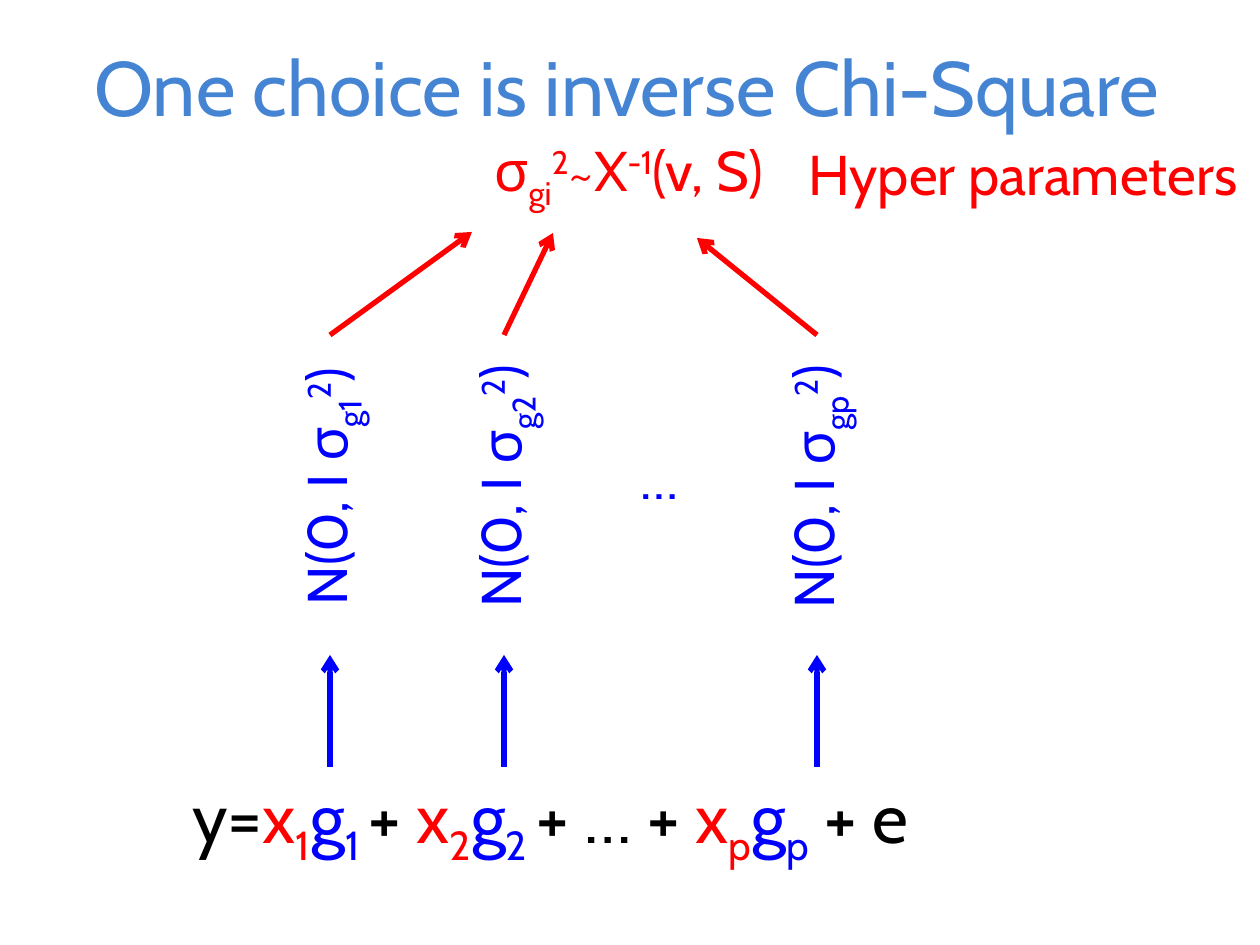
from dataclasses import dataclass
from lxml.etree import SubElement as Sub
from pptx import Presentation
from pptx.dml.color import RGBColor as Rgb
from pptx.enum.shapes import MSO_CONNECTOR as Link
from pptx.enum.text import MSO_ANCHOR as Anchor, MSO_AUTO_SIZE as Fit, PP_ALIGN as Align
from pptx.oxml.ns import qn
from pptx.util import Pt

SCALE = 914400 / 126
SUB, SUP = -25000, 30000


@dataclass(frozen=True)
class Theme:
    font: str = "Cabin"
    title: Rgb = Rgb(0x45, 0x84, 0xD3)
    ink: Rgb = Rgb(0, 0, 0)
    data: Rgb = Rgb(255, 0, 0)
    gene: Rgb = Rgb(0, 0, 255)
    head: int = 44
    model: int = 40
    label: int = 32
    line: int = 3


LOOK = Theme()


def px(num):
    return round(num * SCALE)


def fill_text(shape, runs, size, color, align=Align.CENTER, anchor=Anchor.MIDDLE):
    frame = shape.text_frame
    frame.word_wrap = True
    frame.auto_size = Fit.NONE
    frame.vertical_anchor = anchor
    para = frame.paragraphs[0]
    para.alignment = align
    para.font.name = LOOK.font
    para.font.size = Pt(size)
    para.font.color.rgb = color
    for text, base, tint in runs:
        run = para.add_run()
        run.text = text
        if tint != color:
            run.font.color.rgb = tint
        if base:
            run.font._element.set("baseline", str(base))


def add_label(slide, box, runs, color, turn=0):
    shape = slide.shapes.add_textbox(*map(px, box))
    shape.rotation = turn
    fill_text(shape, [(text, base, color) for text, base in runs], LOOK.label, color)


def add_arrow(slide, start, end, color):
    line = slide.shapes.add_connector(Link.STRAIGHT, *map(px, start + end))
    line.line.color.rgb = color
    line.line.width = Pt(LOOK.line)
    Sub(line.line._get_or_add_ln(), qn("a:tailEnd"), type="arrow")
    Sub(line._element.spPr, qn("a:effectLst"))


def add_title(slide, box):
    title = slide.shapes.title
    title.left, title.top, title.width, title.height = map(px, box)
    fill_text(title, [("One choice is inverse Chi-Square", 0, LOOK.title)],
              LOOK.head, LOOK.title)


def add_model(slide, box):
    def term(mark, gap=" "):
        return [("x", 0, LOOK.data), (mark, SUB, LOOK.data),
                ("g", 0, LOOK.gene), (mark + gap, SUB, LOOK.gene)]

    runs = [("y=", 0, LOOK.ink), *term("1"), ("+ ", 0, LOOK.ink), *term("2"),
            ("+ … + ", 0, LOOK.ink), *term("p", ""), (" + e", 0, LOOK.ink)]
    shape = slide.shapes.add_textbox(*map(px, box))
    fill_text(shape, runs, LOOK.model, LOOK.ink, Align.LEFT, Anchor.TOP)


def add_prior(slide, box, mark, goal):
    left, top, width, height = box
    mid = left + width // 2
    long, thick = 300, 63
    label = (mid - long // 2, top + 151 - thick // 2, long, thick)
    runs = [("N(0, I σ", 0), (f"g{mark}", SUB), ("2", SUP), (")", 0)]
    add_label(slide, label, runs, LOOK.gene, 270)
    add_arrow(slide, (mid, top + height), (mid, top + height - 112), LOOK.gene)
    add_arrow(slide, (mid, top), goal, LOOK.data)


def add_hyper(slide, box):
    left, top, width, height = box
    runs = [("σ", 0), ("gi", SUB), ("2", SUP), ("~X", 0), ("-1", SUP), ("(v, S)", 0)]
    add_label(slide, (left, top, 939, height), runs, LOOK.data)
    add_label(slide, (left + 627, top, width - 627, height),
              [("Hyper parameters", 0)], LOOK.data)


def main():
    deck = Presentation()
    deck.slide_width, deck.slide_height = px(1260), px(945)
    slide = deck.slides.add_slide(deck.slide_layouts[5])
    add_title(slide, (60, -1, 1134, 173))
    add_model(slide, (180, 767, 932, 97))
    priors = [("1", 330, (472, 232)), ("2", 504, (553, 233)), ("p", 817, (697, 238))]
    for mark, mid, goal in priors:
        add_prior(slide, (mid - 32, 335, 64, 432), mark, goal)
    add_label(slide, (592, 446, 134, 63), [("…", 0)], LOOK.gene)
    add_hyper(slide, (159, 142, 1101, 63))
    deck.save("out.pptx")


if __name__ == "__main__":
    main()
